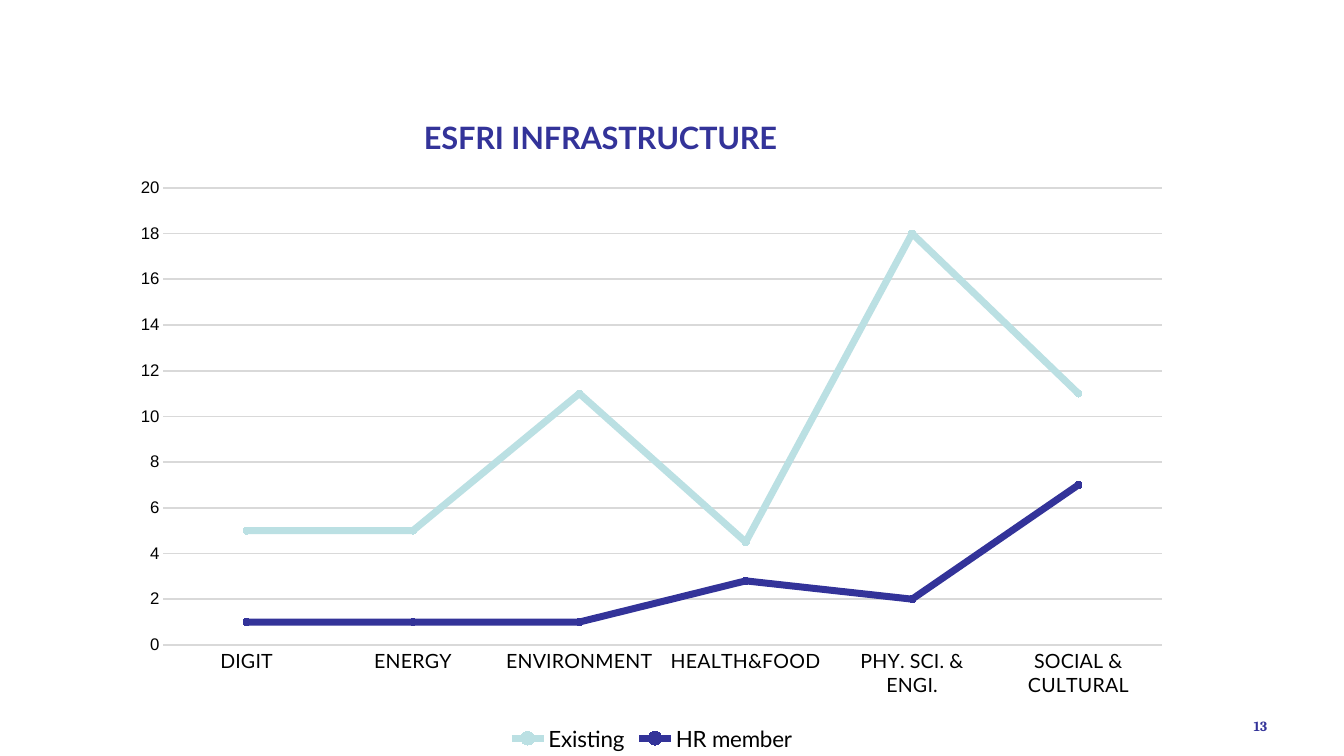
"""Build a slide with a line chart of ESFRI infrastructure by field."""
from lxml.etree import SubElement
from pptx import Presentation
from pptx.chart.data import CategoryChartData
from pptx.dml.color import RGBColor
from pptx.enum.chart import XL_CHART_TYPE as ChartType
from pptx.enum.chart import XL_LEGEND_POSITION as LegendPosition
from pptx.enum.chart import XL_MARKER_STYLE as Marker
from pptx.enum.chart import XL_TICK_MARK as Tick
from pptx.enum.text import MSO_ANCHOR as Anchor
from pptx.enum.text import PP_ALIGN as Align
from pptx.oxml.ns import qn
from pptx.util import Emu, Pt

INDIGO, AQUA, GREY, BLACK = "333399", "BBE0E3", "D9D9D9", "000000"
FIELDS = ["DIGIT", "ENERGY", "ENVIRONMENT", "HEALTH&FOOD",
          "PHY. SCI. & ENGI.", "SOCIAL & CULTURAL"]
MEMBERSHIP = {
    "Existing": (AQUA, [5, 5, 11, 4.5, 18, 11]),
    "HR member": (INDIGO, [1, 1, 1, 2.8, 2, 7]),
}


def px(length):
    """Turn pixels into EMU."""
    return Emu(round(length * 914400 / 100.8))


def color(hex_code):
    """Turn a hex string into a colour."""
    return RGBColor.from_string(hex_code)


def style_font(font, name, size, hex_code, bold=False):
    """Set the face, size, colour and weight of a font."""
    font.name, font.size, font.bold = name, Pt(size), bold
    font.color.rgb = color(hex_code)


def style_line(line, hex_code, width):
    """Set the colour and width in points of a line."""
    line.color.rgb = color(hex_code)
    line.width = Pt(width)


def place_part(part, index, **fractions):
    """Fix a chart part at fractions of the chart's size."""
    layout = part.find(qn("c:layout"))
    if layout is None:
        layout = part.makeelement(qn("c:layout"))
        part.insert(index, layout)
    manual = SubElement(layout, qn("c:manualLayout"))
    if "w" in fractions:
        SubElement(manual, qn("c:layoutTarget"), val="inner")
    for mode in ("xMode", "yMode"):
        SubElement(manual, qn(f"c:{mode}"), val="edge")
    for side, fraction in fractions.items():
        SubElement(manual, qn(f"c:{side}"), val=str(fraction))


def style_axes(chart):
    """Format the field axis, the value axis and its gridlines."""
    fields, counts = chart.category_axis, chart.value_axis
    for axis in (fields, counts):
        axis.major_tick_mark = axis.minor_tick_mark = Tick.NONE
    style_font(fields.tick_labels.font, "Lato", 14, BLACK)
    style_line(fields.format.line, GREY, 0.75)
    style_font(counts.tick_labels.font, "Arial", 12, BLACK)
    counts.format.line.fill.background()
    counts.minimum_scale, counts.maximum_scale, counts.major_unit = 0, 20, 2
    style_line(counts.major_gridlines.format.line, GREY, 1.25)


def add_infrastructure_chart(slide, left, top, width, height):
    """Draw the line chart with its title and legend in the given box."""
    data = CategoryChartData()
    data.categories = FIELDS
    for name, (_, counts) in MEMBERSHIP.items():
        data.add_series(name, counts)
    chart = slide.shapes.add_chart(
        ChartType.LINE_MARKERS, px(left), px(top), px(width), px(height), data).chart
    style_font(chart.font, "Arial", 10, BLACK)

    heading = chart.chart_title.text_frame
    heading.text = "ESFRI INFRASTRUCTURE"
    style_font(heading.paragraphs[0].font, "Lato", 22, INDIGO, bold=True)
    chart.chart_title.include_in_layout = False
    place_part(chart.chart_title._element, 1, x=0.28, y=0.01)
    place_part(chart._chartSpace.chart.plotArea, 0, x=0.04, y=0.13, w=0.94, h=0.7)

    style_axes(chart)
    for series, (hex_code, _) in zip(chart.plots[0].series, MEMBERSHIP.values()):
        series.smooth = False
        style_line(series.format.line, hex_code, 5)
        series.marker.style, series.marker.size = Marker.CIRCLE, 5
        series.marker.format.fill.solid()
        series.marker.format.fill.fore_color.rgb = color(hex_code)
        style_line(series.marker.format.line, hex_code, 0.75)

    chart.has_legend = True
    chart.legend.position = LegendPosition.BOTTOM
    chart.legend.include_in_layout = False
    style_font(chart.legend.font, "Lato", 16, BLACK)


def add_page_number(slide, left, top, width, height):
    """Write the slide number at the right of the given box."""
    frame = slide.shapes.add_textbox(px(left), px(top), px(width), px(height)).text_frame
    frame.word_wrap = True
    frame.vertical_anchor = Anchor.MIDDLE
    number = frame.paragraphs[0]
    number.alignment = Align.RIGHT
    run = number.add_run()
    run.text = "13"
    style_font(run.font, "Cambria", 10, INDIGO, bold=True)


def main():
    """Build and save the slide."""
    deck = Presentation()
    deck.slide_width, deck.slide_height = px(1344), px(756)
    slide = deck.slides.add_slide(deck.slide_layouts[6])
    add_page_number(slide, 1183, 711, 94, 29)
    add_infrastructure_chart(slide, 121, 103, 1062, 653)
    deck.save("out.pptx")


if __name__ == "__main__":
    main()
